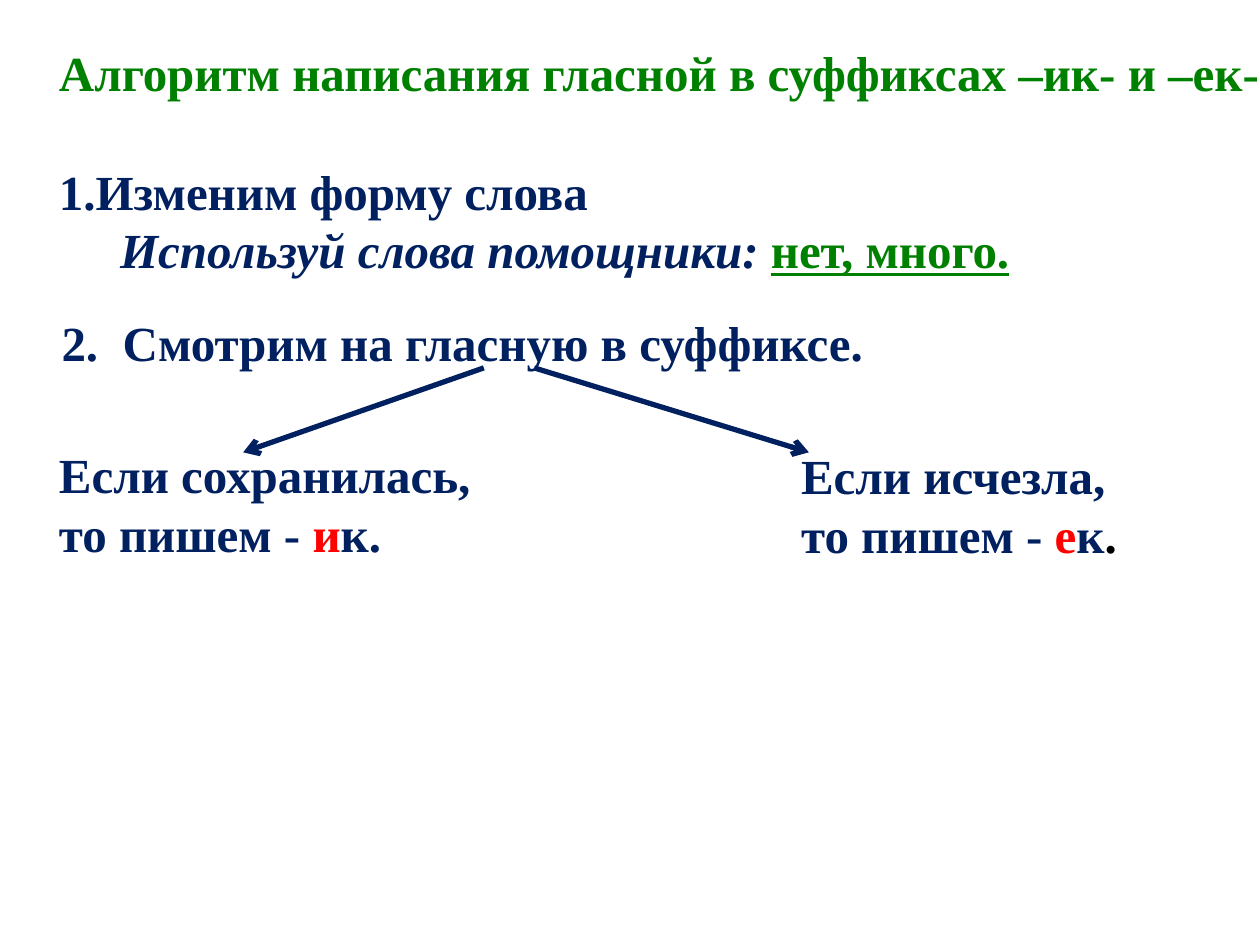
from dataclasses import dataclass

from lxml import etree
from pptx import Presentation
from pptx import util as u
from pptx.dml.color import RGBColor
from pptx.enum import shapes, text
from pptx.oxml import ns
from pptx.slide import Slide


@dataclass(frozen=True)
class Theme:
    font: str = "Times New Roman"
    size: int = 28
    line_width: int = 3
    navy: str = "002060"
    green: str = "008000"
    red: str = "FF0000"
    black: str = "000000"


THEME = Theme()
COLUMNS, ROWS = 100, 75
CELL = u.Inches(0.1)
LEFT_MARGIN = 3.7
INDENT = 4.86


@dataclass(frozen=True)
class Span:
    words: str
    color: str = THEME.navy
    italic: bool = False
    underline: bool = False


@dataclass(frozen=True)
class Line:
    spans: tuple[Span, ...]
    indent: float = 0
    hanging: float = 0


@dataclass(frozen=True)
class Block:
    column: float
    row: float
    width: float
    height: float
    lines: tuple[Line, ...]
    wrap: bool = True


@dataclass(frozen=True)
class Arrow:
    start: tuple[float, float]
    end: tuple[float, float]


def grid(cells: float) -> int:
    return round(cells * CELL)


def outcome(column: float, row: float, width: float, condition: str, *ending: Span) -> Block:
    lines = Line((Span(condition),)), Line((Span("то пишем - "), *ending))
    return Block(column, row, width, 10.4, lines)


BLOCKS = (
    Block(LEFT_MARGIN, 2.9, 98.3, 5.7,
          (Line((Span("Алгоритм написания гласной в суффиксах –ик- и –ек-", THEME.green),)),),
          wrap=False),
    Block(LEFT_MARGIN, 12.3, 80.3, 10.4, (
        Line((Span("1.Изменим форму слова"),)),
        Line((Span("Используй слова помощники: ", italic=True),
              Span("нет, много.", THEME.green, underline=True)), indent=INDENT),
    )),
    Block(3.9, 24.3, 80.7, 5.7,
          (Line((Span("2.\tСмотрим на гласную в суффиксе."),), INDENT, INDENT),)),
    outcome(LEFT_MARGIN, 34.8, 36, "Если сохранилась,", Span("и", THEME.red), Span("к.")),
    outcome(62.6, 34.9, 27.9, "Если исчезла,",
            Span("е", THEME.red), Span("к"), Span(".", THEME.black)),
)

ARROWS = (
    Arrow((42.4, 29.2), (64.2, 35.9)),
    Arrow((38.4, 29.2), (19.3, 35.9)),
)


def add_span(paragraph, words: str, *, color: str, italic: bool, underline: bool) -> None:
    run = paragraph.add_run()
    run.text = words
    font = run.font
    font.name, font.size, font.bold = THEME.font, u.Pt(THEME.size), True
    font.italic, font.underline = italic, underline
    font.color.rgb = RGBColor.from_string(color)


def add_block(slide: Slide, block: Block) -> None:
    shape = slide.shapes.add_textbox(
        grid(block.column), grid(block.row), grid(block.width), grid(block.height))
    frame = shape.text_frame
    frame.word_wrap = block.wrap
    frame.auto_size = text.MSO_AUTO_SIZE.SHAPE_TO_FIT_TEXT
    for index, line in enumerate(block.lines):
        paragraph = frame.add_paragraph() if index else frame.paragraphs[0]
        paragraph.alignment = text.PP_ALIGN.LEFT
        if line.indent:
            properties = paragraph._p.get_or_add_pPr()
            properties.set("marL", str(grid(line.indent)))
            properties.set("indent", str(-grid(line.hanging)))
        for span in line.spans:
            add_span(paragraph, span.words, color=span.color,
                     italic=span.italic, underline=span.underline)


def add_arrow(slide: Slide, arrow: Arrow) -> None:
    connector = slide.shapes.add_connector(
        shapes.MSO_CONNECTOR.STRAIGHT, *map(grid, arrow.start + arrow.end))
    connector.line.color.rgb = RGBColor.from_string(THEME.navy)
    connector.line.width = u.Pt(THEME.line_width)
    etree.SubElement(connector.line._get_or_add_ln(), ns.qn("a:tailEnd"), type="arrow")
    etree.SubElement(connector._element.spPr, ns.qn("a:effectLst"))


def main() -> None:
    presentation = Presentation()
    presentation.slide_width = grid(COLUMNS)
    presentation.slide_height = grid(ROWS)
    slide = presentation.slides.add_slide(presentation.slide_layouts[6])
    for block in BLOCKS:
        add_block(slide, block)
    for arrow in ARROWS:
        add_arrow(slide, arrow)
    presentation.save("out.pptx")


if __name__ == "__main__":
    main()
